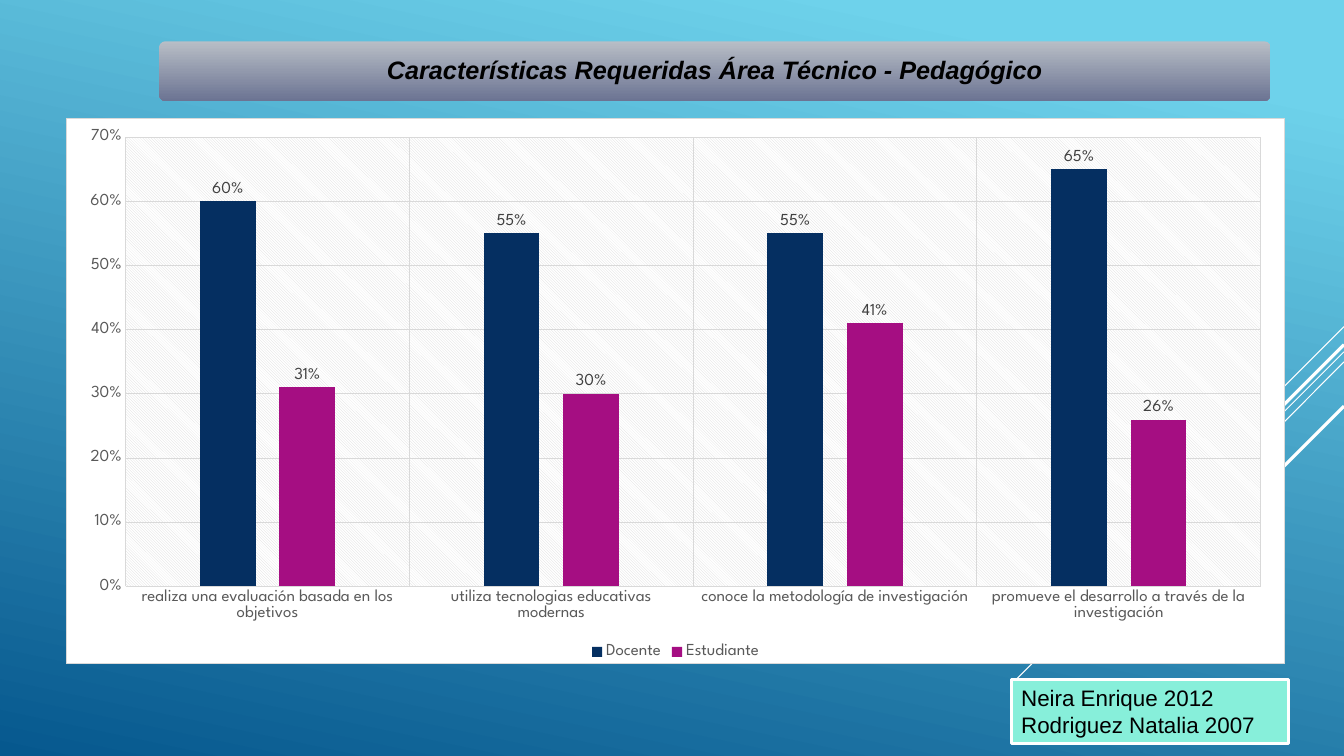
"""Builds a slide with a clustered column chart of required teaching traits."""
from lxml.etree import SubElement
from pptx import Presentation
from pptx.chart.data import CategoryChartData
from pptx.dml.color import RGBColor
from pptx.enum.chart import XL_CHART_TYPE, XL_LABEL_POSITION, XL_LEGEND_POSITION, XL_TICK_MARK
from pptx.enum.shapes import MSO_CONNECTOR, MSO_SHAPE
from pptx.enum.text import MSO_ANCHOR, PP_ALIGN
from pptx.oxml import parse_xml
from pptx.oxml.ns import nsdecls, qn
from pptx.util import Inches, Pt

COLORS = {
    "sky": "6ED2EB", "deep": "06588E", "white": "FFFFFF", "black": "000000",
    "banner_top": "B8BEC6", "banner_bottom": "6C7493", "mint": "87EFDA",
    "grid": "D9D9D9", "axis": "595959", "label": "404040",
    "Docente": "052F61", "Estudiante": "A50E82",
}
CHART_FONT = "League Spartan"


def rgb(name):
    return RGBColor.from_string(COLORS[name])


def write(shape, text, size=16, bold=False, italic=False, align=PP_ALIGN.LEFT,
          anchor=MSO_ANCHOR.TOP, inset=(0.1, 0.05), spacing=1.0):
    tf = shape.text_frame
    tf.word_wrap = True
    tf.vertical_anchor = anchor
    tf.margin_left = tf.margin_right = Inches(inset[0])
    tf.margin_top = tf.margin_bottom = Inches(inset[1])
    tf.text = text
    for p in tf.paragraphs:
        p.alignment = align
        p.line_spacing = spacing
        font = p.runs[0].font
        font.name, font.size = "Arial", Pt(size)
        font.bold, font.italic = bold, italic
        font.color.rgb = rgb("black")


prs = Presentation()
prs.slide_width, prs.slide_height = Inches(13.33), Inches(7.5)
s = prs.slides.add_slide(prs.slide_layouts[6])

banner = s.shapes.add_shape(MSO_SHAPE.ROUNDED_RECTANGLE, Inches(1.58), Inches(0.41),
                            Inches(11.02), Inches(0.59))
banner.adjustments[0] = 0.1
banner.shadow.inherit = False
banner.line.fill.background()

for fill, angle, stops in [
    (s.background.fill, 258, [(0.1, "sky"), (1, "deep")]),
    (banner.fill, 270, [(0, "banner_top"), (1, "banner_bottom")]),
]:
    fill.gradient()
    fill.gradient_angle = angle
    for stop, (position, name) in zip(fill.gradient_stops, stops):
        stop.position = position
        stop.color.rgb = rgb(name)

for start_y, end_x, end_y, width in [
    (3.24, 12.33, 4.24, 0.75),
    (3.49, 10.07, 6.75, 0.75),
    (3.59, 11.26, 5.67, 0.75),
    (3.42, 11.42, 5.33, 2.25),
    (4.03, 11.94, 5.42, 2.25),
]:
    ray = s.shapes.add_connector(MSO_CONNECTOR.STRAIGHT, Inches(13.33), Inches(start_y),
                                 Inches(end_x), Inches(end_y))
    ray.line.color.rgb = rgb("white")
    ray.line.width = Pt(width)
    SubElement(ray._element.spPr, qn("a:effectLst"))

title = s.shapes.add_textbox(Inches(1.61), Inches(0.44), Inches(10.96), Inches(0.54))
write(title, "Características Requeridas Área Técnico - Pedagógico", size=18, bold=True,
      italic=True, align=PP_ALIGN.CENTER, anchor=MSO_ANCHOR.MIDDLE, inset=(0.07, 0.07),
      spacing=0.9)

credit = s.shapes.add_shape(MSO_SHAPE.RECTANGLE, Inches(10.03), Inches(6.74),
                            Inches(2.75), Inches(0.64))
credit.shadow.inherit = False
credit.fill.solid()
credit.fill.fore_color.rgb = rgb("mint")
credit.line.color.rgb = rgb("white")
credit.line.width = Pt(2.25)
write(credit, "Neira Enrique 2012\nRodriguez Natalia 2007")

data = CategoryChartData(number_format="0%")
data.categories = [
    "realiza una evaluación basada en los objetivos",
    "utiliza tecnologias educativas modernas",
    "conoce la metodología de investigación",
    "promueve el desarrollo a través de la investigación",
]
data.add_series("Docente", [0.6, 0.55, 0.55, 0.65])
data.add_series("Estudiante", [0.31, 0.3, 0.41, 0.26])
chart = s.shapes.add_chart(XL_CHART_TYPE.COLUMN_CLUSTERED, Inches(0.65), Inches(1.17),
                           Inches(12.1), Inches(5.42), data).chart
chart.has_title = False
chart.has_legend = True
chart.legend.position = XL_LEGEND_POSITION.BOTTOM
chart.legend.include_in_layout = False

plot = chart.plots[0]
plot.gap_width, plot.overlap = 267, -43
plot.vary_by_categories = False
plot.has_data_labels = True
labels = plot.data_labels
labels.show_value = True
labels.position = XL_LABEL_POSITION.OUTSIDE_END
labels.number_format, labels.number_format_is_linked = "0%", False
for series in plot.series:
    series.format.fill.solid()
    series.format.fill.fore_color.rgb = rgb(series.name)

for axis in (chart.category_axis, chart.value_axis):
    axis.major_tick_mark = axis.minor_tick_mark = XL_TICK_MARK.NONE
    axis.has_major_gridlines = True
    for line in (axis.major_gridlines.format.line, axis.format.line):
        line.color.rgb = rgb("grid")
        line.width = Pt(0.75)
values = chart.value_axis
values.format.line.fill.background()
values.minimum_scale, values.maximum_scale, values.major_unit = 0, 0.7, 0.1
values.tick_labels.number_format = "0%"
values.tick_labels.number_format_is_linked = False

for font, size, name in [
    (chart.font, 10, "white"),
    (chart.legend.font, 12, "axis"),
    (chart.category_axis.tick_labels.font, 12, "axis"),
    (values.tick_labels.font, 12, "axis"),
    (labels.font, 12, "label"),
]:
    font.name, font.size = CHART_FONT, Pt(size)
    font.color.rgb = rgb(name)

white = f'<a:srgbClr val="{COLORS["white"]}"/>'
grid = f'<a:srgbClr val="{COLORS["grid"]}"/>'
frame = parse_xml(
    f'<c:spPr {nsdecls("c", "a")}><a:solidFill>{white}</a:solidFill>'
    f'<a:ln w="{Pt(0.75)}"><a:solidFill>{grid}</a:solidFill></a:ln></c:spPr>')
hatch = parse_xml(
    f'<c:spPr {nsdecls("c", "a")}><a:pattFill prst="ltDnDiag"><a:fgClr>{grid}</a:fgClr>'
    f'<a:bgClr>{white}</a:bgClr></a:pattFill><a:ln><a:noFill/></a:ln></c:spPr>')
space = chart._chartSpace
space.find(qn("c:txPr")).addprevious(frame)
space.find(qn("c:chart")).find(qn("c:plotArea")).append(hatch)

prs.save("out.pptx")
